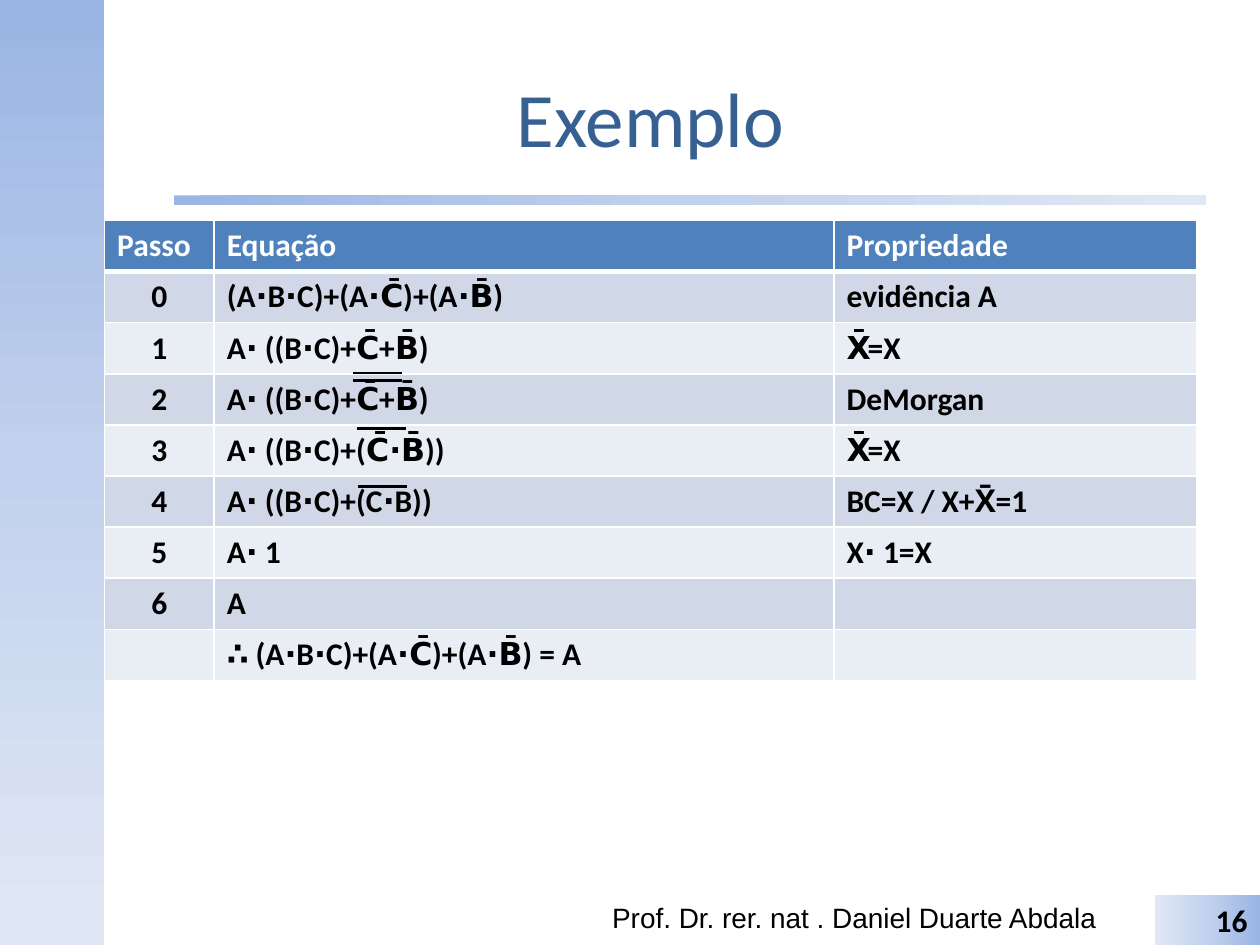
from lxml.etree import SubElement
from pptx import Presentation
from pptx.dml.color import RGBColor
from pptx.enum.shapes import MSO_CONNECTOR, MSO_SHAPE
from pptx.enum.text import MSO_ANCHOR, PP_ALIGN
from pptx.oxml import parse_xml
from pptx.oxml.ns import nsdecls, qn
from pptx.util import Inches, Pt

COLORS = {
    "title": "376092", "text": "000000", "white": "FFFFFF", "header": "4F81BD",
    "odd": "D0D8E8", "even": "E9EDF4",
    "dark": "9AB5E4", "middle": "C2D1ED", "light": "E1E8F5",
}
HEADINGS = ["Passo", "Equação", "Propriedade"]
STEPS = [
    ["0", "(A⋅B⋅C)+(A⋅C̄)+(A⋅B̄)", "evidência A"],
    ["1", "A⋅ ((B⋅C)+C̄+B̄)", "X̄̄=X"],
    ["2", "A⋅ ((B⋅C)+C̄+B̄)", "DeMorgan"],
    ["3", "A⋅ ((B⋅C)+(C̄̄⋅B̄̄))", "X̄̄=X"],
    ["4", "A⋅ ((B⋅C)+(C⋅B))", "BC=X / X+X̄=1"],
    ["5", "A⋅ 1", "X⋅ 1=X"],
    ["6", "A", ""],
    ["", "∴ (A⋅B⋅C)+(A⋅C̄)+(A⋅B̄) = A", ""],
]
OVERBARS = [(2.8, 3.02), (2.8, 2.96), (2.83, 3.4), (2.84, 3.86)]


def color(name):
    return RGBColor.from_string(COLORS[name])


class SlideBuilder:
    font = "Calibri"

    def __init__(self, slide):
        self.slide = slide

    def add_span(self, frame, text, size, ink="text", bold=False, align=PP_ALIGN.LEFT, font=None):
        para = frame.paragraphs[0]
        para.alignment = align
        span = para.add_run()
        span.text = text
        span.font.name = font or self.font
        span.font.size = Pt(size)
        span.font.bold = bold
        span.font.color.rgb = color(ink)

    def title(self, text, *place):
        box = self.slide.shapes.title
        box.left, box.top, box.width, box.height = map(Inches, place)
        box.text_frame.vertical_anchor = MSO_ANCHOR.MIDDLE
        self.add_span(box.text_frame, text, 44, "title", align=PP_ALIGN.CENTER)

    def text(self, text, size, font, *place):
        box = self.slide.shapes.add_textbox(*map(Inches, place))
        box.text_frame.word_wrap = True
        self.add_span(box.text_frame, text, size, font=font)

    def gradient_shape(self, kind, angle, *place):
        shape = self.slide.shapes.add_shape(kind, *map(Inches, place))
        shape.shadow.inherit = False
        shape.line.fill.background()
        stops = "".join(
            f'<a:gs pos="{pos * 1000}"><a:srgbClr val="{COLORS[name]}"/></a:gs>'
            for pos, name in [(0, "dark"), (50, "middle"), (100, "light")])
        gradient = parse_xml(
            f'<a:gradFill {nsdecls("a")} rotWithShape="1"><a:gsLst>{stops}</a:gsLst>'
            f'<a:lin ang="{angle * 60000}" scaled="0"/></a:gradFill>')
        shape.element.spPr.find(qn("a:prstGeom")).addnext(gradient)
        return shape

    def line(self, x1, y1, x2, y2):
        line = self.slide.shapes.add_connector(
            MSO_CONNECTOR.STRAIGHT, *map(Inches, (x1, y1, x2, y2)))
        line.line.color.rgb = color("text")
        line.line.width = Pt(1.5)
        SubElement(line.element.spPr, qn("a:effectLst"))

    def cell_borders(self, cell, **widths):
        properties = cell._tc.get_or_add_tcPr()
        for side in "LRTB":
            properties.append(parse_xml(
                f'<a:ln{side} {nsdecls("a")} w="{Pt(widths.get(side, 1))}"><a:solidFill>'
                f'<a:srgbClr val="{COLORS["white"]}"/></a:solidFill></a:ln{side}>'))

    def table(self, rows, widths, left, top, height):
        frame = self.slide.shapes.add_table(
            len(rows), len(widths), Inches(left), Inches(top),
            Inches(sum(widths)), Inches(height))
        table = frame.table
        for column, width in zip(table.columns, widths):
            column.width = Inches(width)
        for r, row in enumerate(rows):
            fill = "header" if r == 0 else "odd" if r % 2 else "even"
            thick = {0: {"B": 3}, 1: {"T": 3}}.get(r, {})
            for c, text in enumerate(row):
                cell = table.cell(r, c)
                self.cell_borders(cell, **thick)
                cell.fill.solid()
                cell.fill.fore_color.rgb = color(fill)
                if text:
                    centred = r > 0 and c == 0
                    self.add_span(cell.text_frame, text, 18, "text" if r else "white", True,
                                  PP_ALIGN.CENTER if centred else PP_ALIGN.LEFT)


def main():
    deck = Presentation()
    deck.slide_width, deck.slide_height = Inches(10), Inches(7.5)
    page = SlideBuilder(deck.slides.add_slide(deck.slide_layouts[5]))

    # Side band, title and rule
    page.gradient_shape(MSO_SHAPE.RECTANGLE, 90, 0, 0, 0.83, 7.5)
    page.gradient_shape(MSO_SHAPE.ROUNDED_RECTANGLE, 0, 1.38, 1.55, 8.19, 0.08)
    page.title("Exemplo", 0.83, 0.3, 8.67, 1.25)

    # Footer with page number
    page.text("Prof. Dr. rer. nat . Daniel Duarte Abdala", 16, "Arial", 4.76, 7.1, 4.19, 0.4)
    number = page.gradient_shape(MSO_SHAPE.RECTANGLE, 180, 9.17, 7.1, 0.83, 0.4)
    page.add_span(number.text_frame, "16", 18, bold=True, align=PP_ALIGN.RIGHT)

    # Simplification steps
    page.table([HEADINGS] + STEPS, [0.87, 4.92, 2.88], 0.83, 1.75, 3.65)

    # Negation bars over whole terms
    for x, y in OVERBARS:
        page.line(x, y, x + 0.39, y)

    deck.save("out.pptx")


if __name__ == "__main__":
    main()
